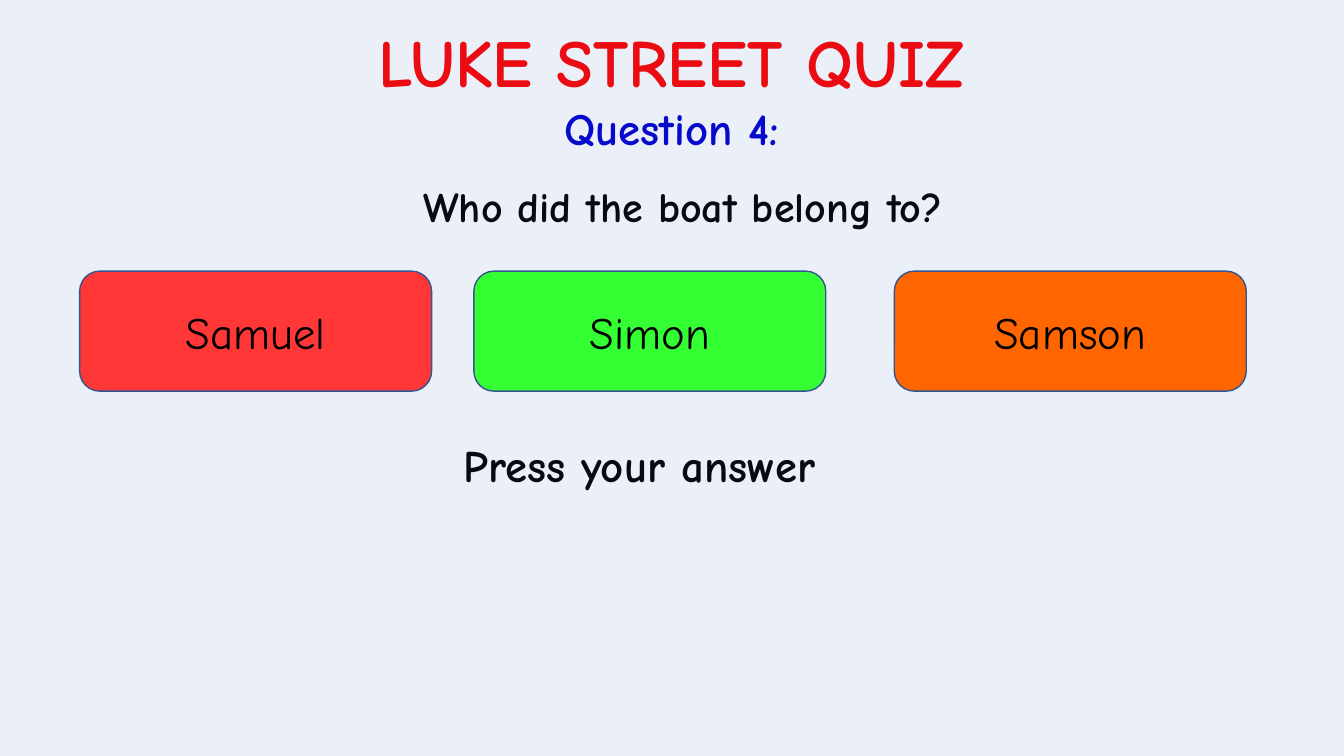
from lxml import etree
from pptx import Presentation
from pptx import util as u
from pptx.dml.color import RGBColor
from pptx.enum import shapes, text
from pptx.oxml.ns import qn

W, H = 13.33, 7.5
FONT = "Comic Neue"
CENTER, LEFT = text.PP_ALIGN.CENTER, text.PP_ALIGN.LEFT

LINES = [
    ("LUKE STREET QUIZ", (3.12, 0.15, 7.08, 0.91), 48, "FF0000", CENTER, None, 0),
    ("Who did the boat belong to?", (0.22, 1.69, 13.11, 1.19), 30, "000000", CENTER, u.Pt(40), 10),
    ("Press your answer", (4.5, 4.35, 6.73, 0.72), 32, "000000", LEFT, 0.9, 7.5),
    ("Question 4:", (4.46, 0.95, 4.41, 0.64), 32, "0000CC", CENTER, None, 0),
]
ANSWERS = [("Samuel", 0.79, "FF3737"), ("Simon", 4.7, "33FF33"), ("Samson", 8.87, "FF6600")]
ANSWER_TOP, ANSWER_W, ANSWER_H = 2.69, 3.49, 1.19
TINT, TINT_ALPHA, EDGE = "4472C4", 10, "325491"


def color(value):
    return RGBColor.from_string(value)


def box(x, y, w, h):
    return [u.Inches(v) for v in (x, y, w, h)]


def write(sp, words, size, ink, align=CENTER, bold=False):
    tf = sp.text_frame
    tf.word_wrap = True
    p = tf.paragraphs[0]
    p.alignment = align
    r = p.add_run()
    r.text = words
    r.font.name, r.font.size, r.font.bold = FONT, u.Pt(size), bold
    r.font.color.rgb = color(ink)
    return p


def add_block(s, kind, place, fill):
    sp = s.shapes.add_shape(kind, *box(*place))
    sp.shadow.inherit = False
    sp.fill.solid()
    sp.fill.fore_color.rgb = color(fill)
    sp.line.color.rgb = color(EDGE)
    sp.line.width = u.Pt(1)
    return sp


prs = Presentation()
prs.slide_width, prs.slide_height = u.Inches(W), u.Inches(H)
s = prs.slides.add_slide(prs.slide_layouts[6])
s.background.fill.solid()
s.background.fill.fore_color.rgb = color("FFFFFF")

for words, place, size, ink, align, spacing, before in LINES:
    p = write(s.shapes.add_textbox(*box(*place)), words, size, ink, align, True)
    p.line_spacing = spacing
    p.space_before = u.Pt(before)

tint = add_block(s, shapes.MSO_SHAPE.RECTANGLE, (0, 0, W, H), TINT)
tint.line.fill.background()
tint_color = tint.fill._xPr.find(qn("a:solidFill"))[0]
etree.SubElement(tint_color, qn("a:alpha")).set("val", str(TINT_ALPHA * 1000))

for name, left, fill in ANSWERS:
    place = (left, ANSWER_TOP, ANSWER_W, ANSWER_H)
    button = add_block(s, shapes.MSO_SHAPE.ROUNDED_RECTANGLE, place, fill)
    button.text_frame.vertical_anchor = text.MSO_ANCHOR.MIDDLE
    write(button, name, 32, "000000")

prs.save("out.pptx")
